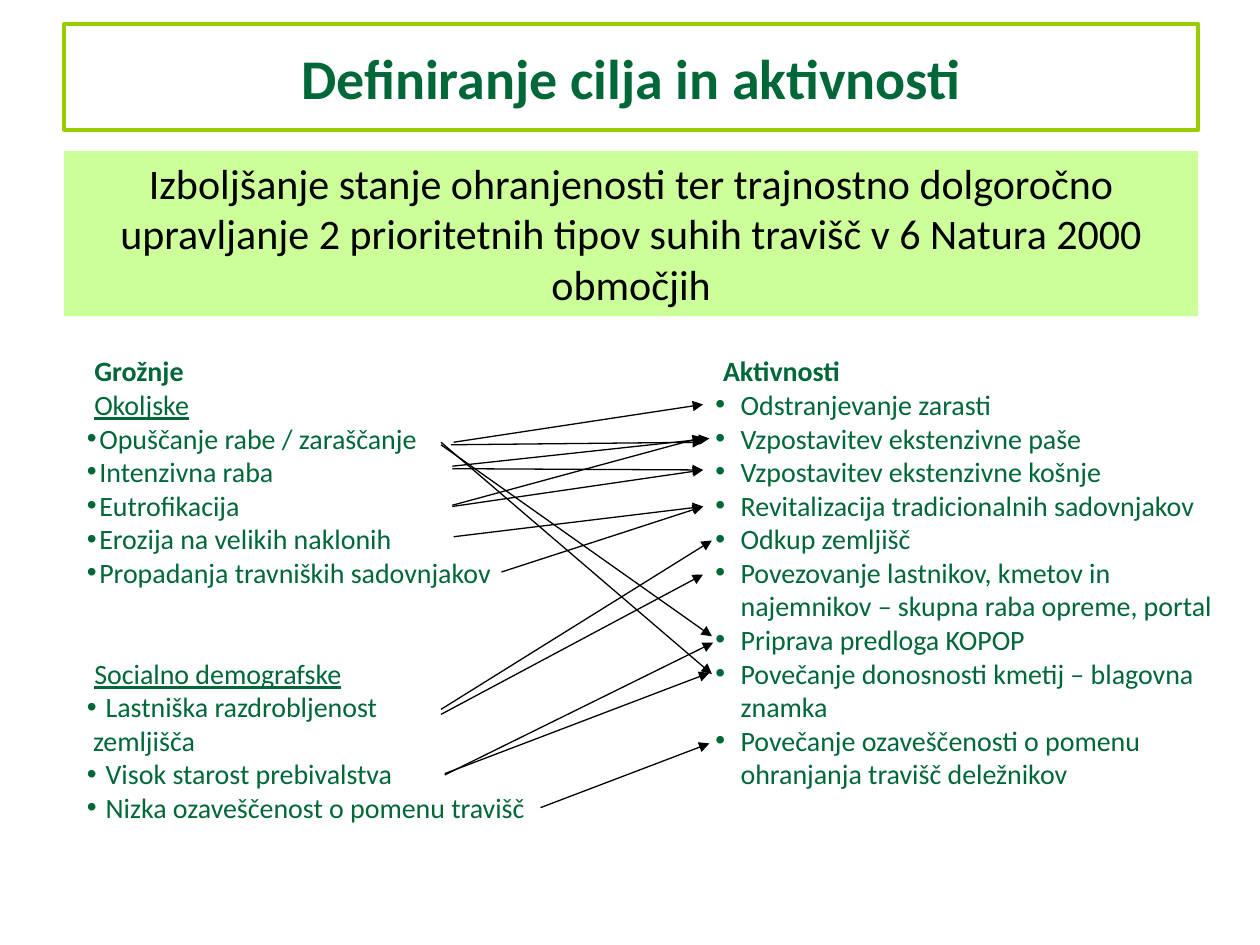
from lxml import etree
from pptx import Presentation
from pptx.dml.color import RGBColor
from pptx.enum.shapes import MSO_CONNECTOR, MSO_SHAPE
from pptx.enum.text import MSO_ANCHOR, MSO_AUTO_SIZE, PP_ALIGN
from pptx.oxml.ns import qn
from pptx.util import Inches, Pt

CENTER, LEFT = PP_ALIGN.CENTER, PP_ALIGN.LEFT
MIDDLE, TOP = MSO_ANCHOR.MIDDLE, MSO_ANCHOR.TOP
NONE = MSO_AUTO_SIZE.NONE
RECT, STRAIGHT = MSO_SHAPE.RECTANGLE, MSO_CONNECTOR.STRAIGHT

COLORS = {"text": "006738", "frame": "99CC00", "goal": "CCFF99", "ink": "000000"}
FONT = "Calibri"
TITLE = "Definiranje cilja in aktivnosti"
GOAL = ("Izboljšanje stanje ohranjenosti ter trajnostno dolgoročno upravljanje "
        "2 prioritetnih tipov suhih travišč v 6 Natura 2000 območjih")

STYLES = {
    "head": {"left": 0.06, "bold": True},
    "group": {"left": 0.06, "line": True},
    "later": {"left": 0.06, "line": True, "gap": 38.4},
    "threat": {"left": 0.1, "bullet": True},
    "social": {"left": 0.15, "bullet": True},
    "rest": {"left": 0.05},
    "task": {"left": 0.2, "bullet": True},
}
THREATS = [
    ("head", ["Grožnje"]),
    ("group", ["Okoljske"]),
    ("threat", ["Opuščanje rabe / zaraščanje", "Intenzivna raba", "Eutrofikacija",
                "Erozija na velikih naklonih", "Propadanja travniških sadovnjakov"]),
    ("later", ["Socialno demografske"]),
    ("social", ["Lastniška razdrobljenost"]),
    ("rest", ["zemljišča"]),
    ("social", ["Visok starost prebivalstva", "Nizka ozaveščenost o pomenu travišč"]),
]
TASKS = [
    ("head", ["Aktivnosti"]),
    ("task", ["Odstranjevanje zarasti", "Vzpostavitev ekstenzivne paše",
              "Vzpostavitev ekstenzivne košnje",
              "Revitalizacija tradicionalnih sadovnjakov", "Odkup zemljišč",
              "Povezovanje lastnikov, kmetov in najemnikov – skupna raba opreme, portal",
              "Priprava predloga KOPOP", "Povečanje donosnosti kmetij – blagovna znamka",
              "Povečanje ozaveščenosti o pomenu ohranjanja travišč deležnikov"]),
]
COLUMNS = [((0.59, 2.76, 3.69, 3.87), THREATS), ((5.58, 2.76, 4.22, 3.6), TASKS)]
ARROWS = [
    (3.6, 3.51, 5.58, 3.21), (3.59, 3.72, 5.58, 3.73), (3.6, 4.26, 5.58, 4.02),
    (3.59, 3.7, 5.63, 3.48), (3.59, 4.01, 5.58, 3.47), (3.98, 4.54, 5.58, 4.02),
    (3.53, 6.14, 5.63, 5.34), (3.53, 6.15, 5.66, 5.1), (3.5, 5.63, 5.65, 4.29),
    (3.59, 4.02, 5.58, 3.73), (3.5, 5.67, 5.58, 4.56), (3.58, 3.53, 5.58, 3.51),
    (4.29, 6.41, 5.63, 5.9), (3.5, 3.53, 5.65, 5.05), (3.5, 3.51, 5.65, 5.35),
]


def color(name):
    return RGBColor.from_string(COLORS[name])


def write(para, text, size, tint, align=LEFT, bold=False, line=False):
    para.text = text
    para.alignment = align
    font = para.font
    font.name, font.size = FONT, Pt(size)
    font.bold, font.underline = bold, line
    font.color.rgb = color(tint)


def set_frame(frame, anchor):
    frame.word_wrap = True
    frame.auto_size = NONE
    frame.vertical_anchor = anchor


def add_title(slide):
    title = slide.shapes.title
    title.left, title.top, title.width, title.height = map(Inches, (0.51, 0.19, 9, 0.84))
    title.line.color.rgb = color("frame")
    title.line.width = Pt(2.25)
    set_frame(title.text_frame, MIDDLE)
    write(title.text_frame.paragraphs[0], TITLE, 32, "text", CENTER, bold=True)


def add_goal(slide):
    box = slide.shapes.add_shape(RECT, *map(Inches, (0.51, 1.2, 9, 1.31)))
    box.shadow.inherit = False
    box.fill.solid()
    box.fill.fore_color.rgb = color("goal")
    box.line.fill.background()
    set_frame(box.text_frame, TOP)
    write(box.text_frame.paragraphs[0], GOAL, 24, "ink", CENTER)


def add_column(slide, place, groups):
    frame = slide.shapes.add_textbox(*map(Inches, place)).text_frame
    set_frame(frame, TOP)
    rows = [(STYLES[kind], text) for kind, texts in groups for text in texts]
    for i, (style, text) in enumerate(rows):
        para = frame.add_paragraph() if i else frame.paragraphs[0]
        if "gap" in style:
            para.space_before = Pt(style["gap"])
        props = para._p.get_or_add_pPr()
        left = Inches(style["left"])
        props.set("marL", str(left))
        props.set("indent", str(-left if "bullet" in style else 0))
        if "bullet" in style:
            etree.SubElement(props, qn("a:buFont"), typeface="Arial")
            etree.SubElement(props, qn("a:buChar"), char="•")
        write(para, text, 16, "text", bold="bold" in style, line="line" in style)


def add_arrow(slide, ends):
    arrow = slide.shapes.add_connector(STRAIGHT, *map(Inches, ends))
    arrow.line.color.rgb = color("ink")
    arrow.line.width = Pt(0.75)
    etree.SubElement(arrow.line._get_or_add_ln(), qn("a:tailEnd"), type="triangle")
    etree.SubElement(arrow._element.spPr, qn("a:effectLst"))


def main():
    deck = Presentation()
    deck.slide_width, deck.slide_height = Inches(10), Inches(7.5)
    slide = deck.slides.add_slide(deck.slide_layouts[5])
    add_title(slide)
    add_goal(slide)
    for place, groups in COLUMNS:
        add_column(slide, place, groups)
    for ends in ARROWS:
        add_arrow(slide, ends)
    deck.save("out.pptx")


if __name__ == "__main__":
    main()
